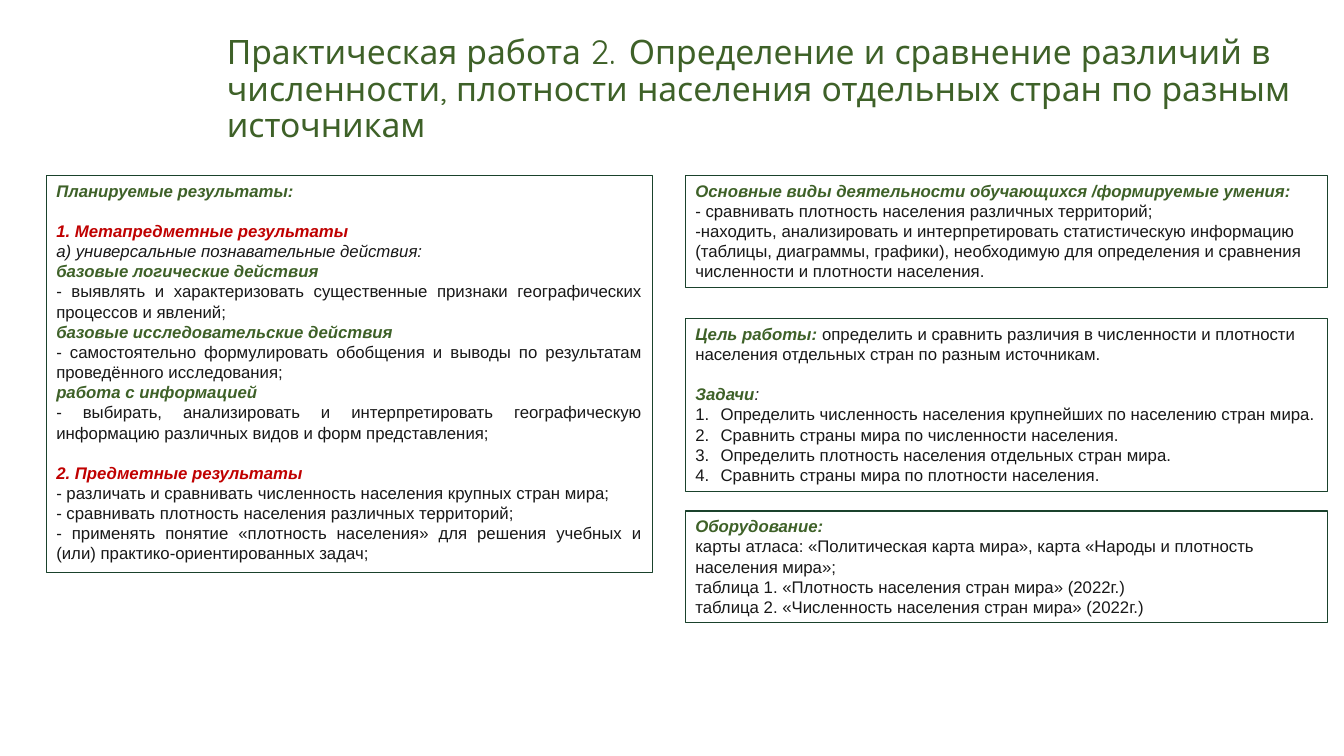
import pptx
import pptx.util
import pptx.dml.color
import pptx.enum.shapes
import pptx.enum.text
from dataclasses import dataclass
from lxml import etree
from pptx.oxml.ns import qn

Pt = pptx.util.Pt
Align = pptx.enum.text.PP_ALIGN


@dataclass(frozen=True)
class Theme:
    green: str = "3E6128"
    red: str = "C00000"
    ink: str = "181818"
    border: str = "1A422C"
    title_size: int = 24
    body_size: int = 12
    section_gap: float = 14.4


theme = Theme()

# Run style: colour, bold, italic
STYLES = {
    "heading": (theme.green, True, True),
    "section": (theme.red, True, True),
    "plain": (theme.ink, False, False),
    "italic": (theme.ink, False, True),
}


def add_span(para, text, style):
    colour, bold, italic = STYLES[style]
    span = para.add_run()
    span.text = text
    span.font.name = "Arial"
    span.font.size = Pt(theme.body_size)
    span.font.bold = bold
    span.font.italic = italic
    span.font.color.rgb = pptx.dml.color.RGBColor.from_string(colour)


def add_panel(slide, place, paragraphs):
    """Each paragraph is (layout words, (text, style), ...): gap, justify, number."""
    box = slide.shapes.add_shape(
        pptx.enum.shapes.MSO_SHAPE.RECTANGLE, *(Pt(length) for length in place))
    box.shadow.inherit = False
    box.fill.background()
    box.line.color.rgb = pptx.dml.color.RGBColor.from_string(theme.border)
    box.line.width = Pt(0.75)
    frame = box.text_frame
    frame.word_wrap = True
    frame.auto_size = pptx.enum.text.MSO_AUTO_SIZE.SHAPE_TO_FIT_TEXT
    frame.vertical_anchor = pptx.enum.text.MSO_ANCHOR.TOP
    for index, (layout, *spans) in enumerate(paragraphs):
        para = frame.add_paragraph() if index else frame.paragraphs[0]
        para.alignment = Align.JUSTIFY if "justify" in layout else Align.LEFT
        if "gap" in layout:
            para.space_before = Pt(theme.section_gap)
        if "number" in layout:
            properties = para._p.get_or_add_pPr()
            properties.set("marL", str(Pt(18)))
            properties.set("indent", str(-Pt(18)))
            etree.SubElement(properties, qn("a:buFont"), typeface="+mj-lt")
            etree.SubElement(properties, qn("a:buAutoNum"), type="arabicPeriod")
        for text, style in spans:
            add_span(para, text, style)


deck = pptx.Presentation()
deck.slide_width, deck.slide_height = Pt(960), Pt(540)
slide = deck.slides.add_slide(deck.slide_layouts[5])

title = slide.shapes.title
title.left, title.top, title.width, title.height = Pt(154.8), Pt(12.2), Pt(784), Pt(104.4)
title.text_frame.word_wrap = True
title.text_frame.vertical_anchor = pptx.enum.text.MSO_ANCHOR.MIDDLE
para = title.text_frame.paragraphs[0]
para.alignment = Align.LEFT
para.line_spacing = 0.9
span = para.add_run()
span.text = ("Практическая работа 2.\u202f Определение и сравнение различий в численности, "
             "плотности населения отдельных стран по разным источникам")
span.font.name = "Quicksand"
span.font.size = Pt(theme.title_size)
span.font.color.rgb = pptx.dml.color.RGBColor.from_string(theme.green)

results = [
    ("", ("Планируемые результаты:", "heading")),
    ("gap", ("1. Метапредметные результаты", "section")),
    ("justify", ("а) универсальные познавательные действия:", "italic")),
    ("justify", ("базовые логические действия", "heading")),
    ("justify", ("- выявлять и характеризовать существенные признаки географических "
                 "процессов и явлений;", "plain")),
    ("justify", ("базовые исследовательские действия", "heading")),
    ("justify", ("- самостоятельно формулировать обобщения и выводы по результатам "
                 "проведённого исследования;", "plain")),
    ("justify", ("работа с информацией", "heading")),
    ("justify", ("- выбирать, анализировать и интерпретировать географическую "
                 "информацию различных видов и форм представления;", "plain")),
    ("justify gap", ("2. Предметные результаты", "section")),
    ("justify", ("- различать и сравнивать численность населения крупных стран мира;", "plain")),
    ("justify", ("- сравнивать плотность населения различных территорий;", "plain")),
    ("justify", ("- применять понятие «плотность населения» для решения учебных и "
                 "(или) практико-ориентированных задач;", "plain")),
]
skills = [
    ("", ("Основные виды деятельности обучающихся /формируемые умения:", "heading")),
    ("", ("- сравнивать плотность населения различных территорий;", "plain")),
    ("", ("-находить, анализировать и интерпретировать статистическую информацию "
          "(таблицы, диаграммы, графики), необходимую для определения и сравнения "
          "численности и плотности населения.", "plain")),
]
goal = [
    ("", ("Цель работы: ", "heading"),
     ("определить и сравнить различия в численности и плотности населения "
      "отдельных стран по разным источникам.", "plain")),
    ("gap", ("Задачи", "heading"), (":", "italic")),
    ("number", ("Определить численность населения крупнейших по населению стран мира.", "plain")),
    ("number", ("Сравнить страны мира по численности населения.", "plain")),
    ("number", ("Определить плотность населения отдельных стран мира.", "plain")),
    ("number", ("Сравнить страны мира по плотности населения.", "plain")),
]
equipment = [
    ("", ("Оборудование:", "heading")),
    ("", ("карты атласа: «Политическая карта мира», карта «Народы и плотность "
          "населения мира»;", "plain")),
    ("", ("таблица 1. «Плотность населения стран мира» (2022г.)", "plain")),
    ("", ("таблица 2. «Численность населения стран мира» (2022г.)", "plain")),
]

add_panel(slide, (33.1, 125.3, 432.7, 283.7), results)
for top, height, paragraphs in ((125.3, 79.9, skills), (227.5, 123.8, goal),
                                (365, 79.9, equipment)):
    add_panel(slide, (489.6, top, 458.6, height), paragraphs)

deck.save("out.pptx")
